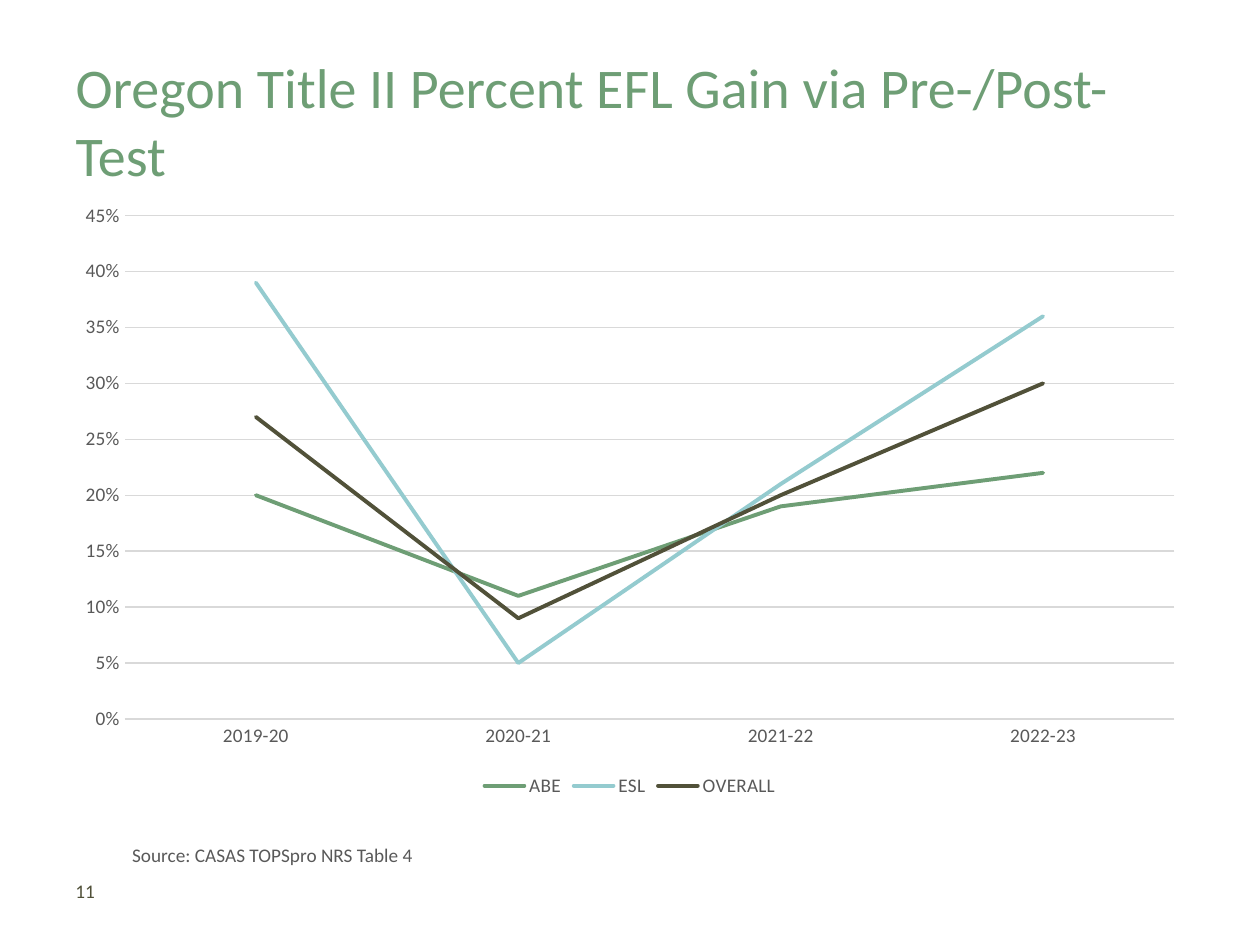
import pptx
import pptx.chart.data
import pptx.dml.color
import pptx.enum.chart
import pptx.enum.text
import pptx.util
from pptx.util import Inches

FONT = "Calibri"
GREEN, TEAL, OLIVE = "6E9E75", "94CBCF", "515139"
GRAY, GRID = "595959", "D9D9D9"

YEARS = ["2019-20", "2020-21", "2021-22", "2022-23"]
GAINS = [
    ("ABE", GREEN, [0.2, 0.11, 0.19, 0.22]),
    ("ESL", TEAL, [0.39, 0.05, 0.21, 0.36]),
    ("OVERALL", OLIVE, [0.27, 0.09, 0.2, 0.3]),
]


def rgb(hex_color):
    return pptx.dml.color.RGBColor.from_string(hex_color)


def style_font(font, size, color):
    font.name = FONT
    font.size = pptx.util.Pt(size)
    font.color.rgb = rgb(color)


def style_line(line, color, width):
    line.color.rgb = rgb(color)
    line.width = pptx.util.Pt(width)


def place_title(slide, box):
    title = slide.shapes.title
    title.left, title.top, title.width, title.height = box
    frame = title.text_frame
    frame.text = "Oregon Title II Percent EFL Gain via Pre-/Post-Test"
    frame.word_wrap = True
    frame.auto_size = pptx.enum.text.MSO_AUTO_SIZE.NONE
    frame.vertical_anchor = pptx.enum.text.MSO_ANCHOR.TOP
    heading = frame.paragraphs[0]
    heading.alignment = pptx.enum.text.PP_ALIGN.LEFT
    style_font(heading.font, 32, GREEN)


def place_gain_chart(slide, box):
    data = pptx.chart.data.CategoryChartData(number_format="0%")
    data.categories = YEARS
    for name, _, values in GAINS:
        data.add_series(name, values)
    chart = slide.shapes.add_chart(
        pptx.enum.chart.XL_CHART_TYPE.LINE, *box, data).chart
    chart.has_title = False
    style_font(chart.font, 10, "000000")

    for series, (_, color, _) in zip(chart.plots[0].series, GAINS):
        series.smooth = False
        series.marker.style = pptx.enum.chart.XL_MARKER_STYLE.NONE
        style_line(series.format.line, color, 2.25)
        series._element.spPr.ln.set("cap", "rnd")

    years, percents = chart.category_axis, chart.value_axis
    for axis in (years, percents):
        axis.major_tick_mark = pptx.enum.chart.XL_TICK_MARK.NONE
        axis.minor_tick_mark = pptx.enum.chart.XL_TICK_MARK.NONE
        style_font(axis.tick_labels.font, 11, GRAY)
    style_line(years.format.line, GRID, 0.75)
    percents.format.line.fill.background()
    percents.minimum_scale, percents.maximum_scale = 0, 0.45
    percents.major_unit = 0.05
    percents.tick_labels.number_format = "0%"
    percents.tick_labels.number_format_is_linked = False
    style_line(percents.major_gridlines.format.line, GRID, 0.75)

    chart.has_legend = True
    chart.legend.position = pptx.enum.chart.XL_LEGEND_POSITION.BOTTOM
    chart.legend.include_in_layout = False
    style_font(chart.legend.font, 11, GRAY)


def place_note(slide, box, text, color, anchor, wrap):
    frame = slide.shapes.add_textbox(*box).text_frame
    frame.text = text
    frame.word_wrap = wrap
    frame.vertical_anchor = anchor
    if not wrap:
        frame.auto_size = pptx.enum.text.MSO_AUTO_SIZE.SHAPE_TO_FIT_TEXT
    style_font(frame.paragraphs[0].font, 11, color)


def inches(*lengths):
    return [Inches(length) for length in lengths]


def main():
    deck = pptx.Presentation()
    deck.slide_width, deck.slide_height = inches(10, 7.5)
    slide = deck.slides.add_slide(deck.slide_layouts[5])
    anchors = pptx.enum.text.MSO_ANCHOR
    place_gain_chart(slide, inches(0.5, 1.52, 9, 4.85))
    place_title(slide, inches(0.5, 0.37, 9, 1))
    place_note(slide, inches(0.5, 6.92, 2.33, 0.3), "11",
               OLIVE, anchors.MIDDLE, True)
    place_note(slide, inches(0.95, 6.64, 2.5, 0.29),
               "Source: CASAS TOPSpro NRS Table 4", GRAY, anchors.TOP, False)
    deck.save("out.pptx")


if __name__ == "__main__":
    main()
